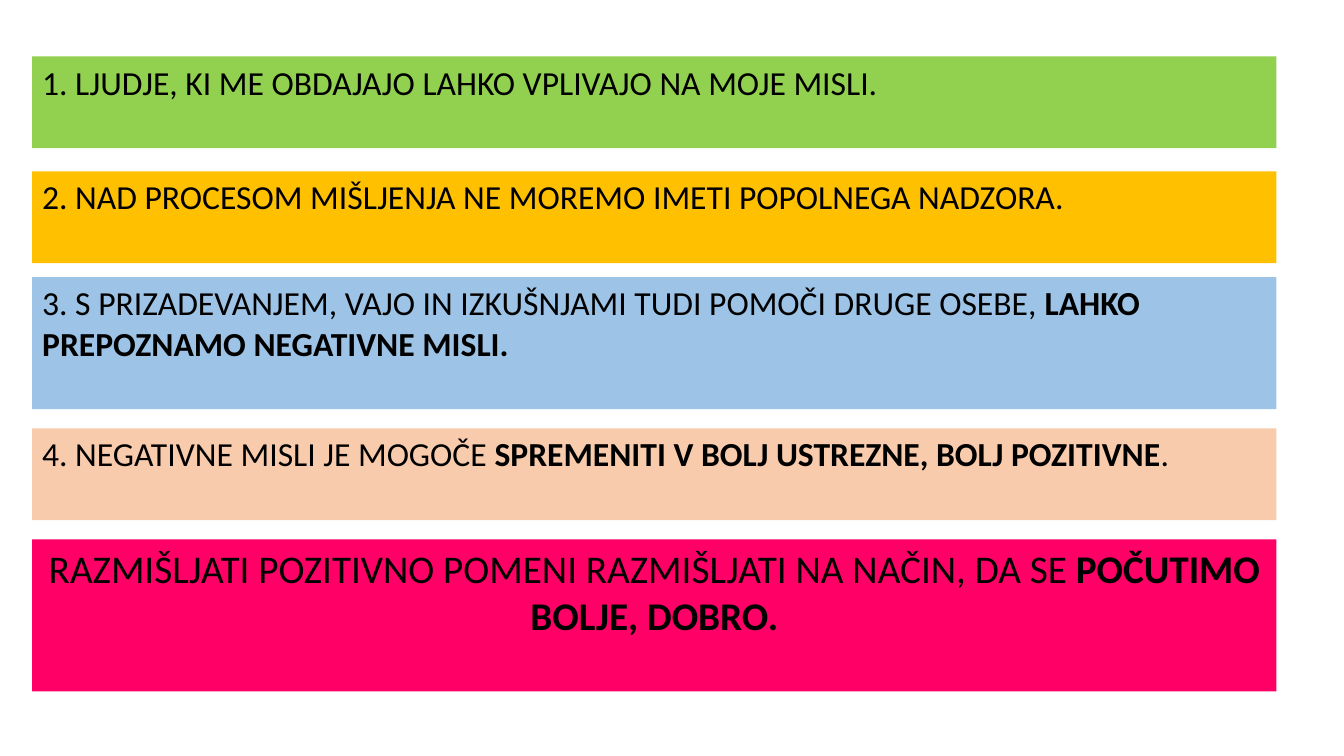
from dataclasses import dataclass

from pptx import Presentation
from pptx.dml.color import RGBColor
from pptx.enum.text import MSO_ANCHOR, PP_ALIGN
from pptx.util import Pt

PX = 9144
LEFT, CENTER = PP_ALIGN.LEFT, PP_ALIGN.CENTER
TOP = MSO_ANCHOR.TOP


@dataclass(frozen=True)
class Theme:
    font: str = "Calibri"
    text: str = "000000"
    green: str = "92D050"
    amber: str = "FFC000"
    blue: str = "9DC3E6"
    peach: str = "F8CBAD"
    pink: str = "FF0066"
    point: int = 24
    conclusion: int = 28


THEME = Theme()

POINTS = [
    (56, 91, THEME.green,
     [("1. LJUDJE, KI ME OBDAJAJO LAHKO VPLIVAJO NA MOJE MISLI.", False)]),
    (170, 91, THEME.amber,
     [("2. NAD PROCESOM MIŠLJENJA NE MOREMO IMETI POPOLNEGA NADZORA.", False)]),
    (275, 131, THEME.blue,
     [("3. S PRIZADEVANJEM, VAJO IN IZKUŠNJAMI TUDI POMOČI DRUGE OSEBE, ", False),
      ("LAHKO PREPOZNAMO NEGATIVNE MISLI.", True)]),
    (425, 91, THEME.peach,
     [("4. NEGATIVNE MISLI JE MOGOČE ", False),
      ("SPREMENITI V BOLJ USTREZNE, BOLJ POZITIVNE", True),
      (".", False)]),
]

CONCLUSION = [
    ("RAZMIŠLJATI POZITIVNO POMENI RAZMIŠLJATI NA NAČIN, DA SE ", False),
    ("POČUTIMO BOLJE, DOBRO.", True),
]


def set_attrs(target, values):
    for name, value in values.items():
        setattr(target, name, value)


def add_band(slide, box, fill, runs, size, align):
    sp = slide.shapes.add_textbox(*(v * PX for v in box))
    sp.fill.solid()
    sp.fill.fore_color.rgb = RGBColor.from_string(fill)
    tf = sp.text_frame
    set_attrs(tf, {"word_wrap": True, "vertical_anchor": TOP})
    p = tf.paragraphs[0]
    p.alignment = align
    for text, bold in runs:
        r = p.add_run()
        r.text = text
        set_attrs(r.font, {"name": THEME.font, "size": Pt(size), "bold": bold})
        r.font.color.rgb = RGBColor.from_string(THEME.text)


def add_points(slide, box):
    left, top, width, _ = box
    for y, height, fill, runs in POINTS:
        band = (left, top + y, width, height)
        add_band(slide, band, fill, runs, THEME.point, LEFT)


def add_conclusion(slide, box):
    add_band(slide, box, THEME.pink, CONCLUSION, THEME.conclusion, CENTER)


def main():
    prs = Presentation()
    set_attrs(prs, {"slide_width": 1333 * PX, "slide_height": 750 * PX})
    s = prs.slides.add_slide(prs.slide_layouts[6])
    add_points(s, (32, 0, 1234, 516))
    add_conclusion(s, (32, 535, 1234, 151))
    prs.save("out.pptx")


if __name__ == "__main__":
    main()
